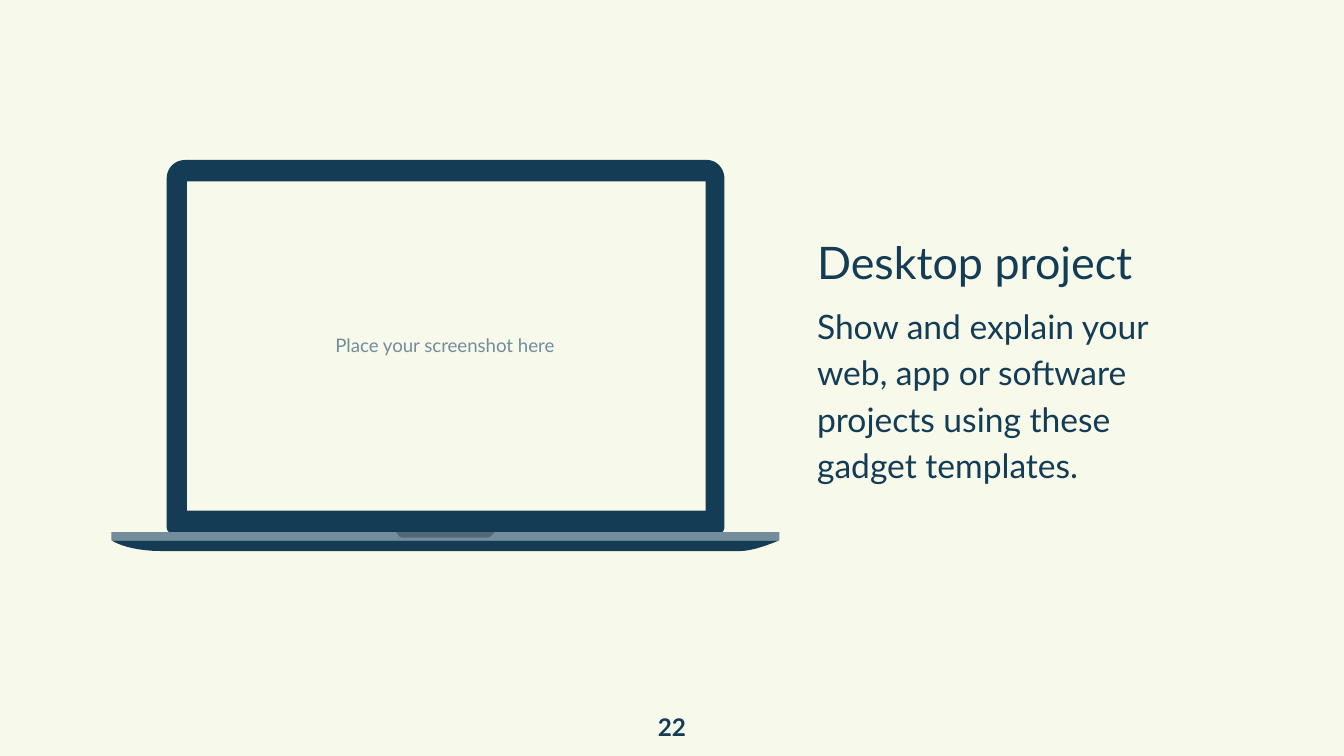
import pptx
import pptx.dml.color
import pptx.enum.text
import pptx.util

Inches = pptx.util.Inches
ALIGN = pptx.enum.text.PP_ALIGN
HUES = {"cream": "F7F9EA", "navy": "143C55", "steel": "748C9C", "slate": "536877"}


def tint(name):
    return pptx.dml.color.RGBColor.from_string(HUES[name])


def write(para, text, size=18, hue="navy", bold=False, align=ALIGN.LEFT, lead=1.0, gap=0):
    para.alignment = align
    para.line_spacing = lead
    para.space_before = pptx.util.Pt(gap)
    run = para.add_run()
    run.text = text
    font = run.font
    font.name, font.size, font.bold = "Lato", pptx.util.Pt(size), bold
    font.color.rgb = tint(hue)


def trace(steps, parts=12):
    spots = []
    for step in steps:
        if len(step) == 2:
            spots.append(step)
            continue
        ctrl = [spots[-1], step[:2], step[2:4], step[4:]]
        for i in range(1, parts + 1):
            t = i / parts
            mix = ((1 - t) ** 3, 3 * t * (1 - t) ** 2, 3 * t * t * (1 - t), t ** 3)
            spots.append(tuple(sum(m * c[k] for m, c in zip(mix, ctrl)) for k in (0, 1)))
    return [(Inches(x), Inches(y)) for x, y in spots]


class Deck:
    """Hold the slide and draw its elements in one style."""

    def __init__(self):
        self.file = pptx.Presentation()
        self.file.slide_width = Inches(10)
        self.file.slide_height = Inches(10 * 9 / 16)
        self.slide = self.file.slides.add_slide(self.file.slide_layouts[6])
        fill = self.slide.background.fill
        fill.solid()
        fill.fore_color.rgb = tint("cream")

    def label(self, area, items, inset=0):
        frame = self.slide.shapes.add_textbox(*map(Inches, area)).text_frame
        frame.word_wrap = True
        frame.vertical_anchor = pptx.enum.text.MSO_ANCHOR.MIDDLE
        frame.margin_left = frame.margin_right = Inches(inset)
        frame.margin_top = frame.margin_bottom = Inches(inset)
        for i, (text, style) in enumerate(items):
            para = frame.add_paragraph() if i else frame.paragraphs[0]
            write(para, text, **style)

    def form(self, hue, *loops):
        first, *rest = map(trace, loops)
        pen = self.slide.shapes.build_freeform(*first[0], scale=1.0)
        pen.add_line_segments(first[1:])
        for spots in rest:
            pen.move_to(*spots[0])
            pen.add_line_segments(spots[1:])
        shape = pen.convert_to_shape()
        shape.shadow.inherit = False
        shape.fill.solid()
        shape.fill.fore_color.rgb = tint(hue)
        shape.line.fill.background()


def main():
    deck = Deck()
    deck.label((1.38, 1.34, 3.86, 2.46), [
        ("Place your screenshot here", dict(size=10, hue="steel", align=ALIGN.CENTER)),
    ], inset=0.1)
    deck.label((4.7, 5.19, 0.6, 0.43), [
        ("22", dict(size=13, bold=True, align=ALIGN.CENTER)),
    ])

    lid = [(5.26, 1.19), (1.38, 1.19), (1.3, 1.19, 1.24, 1.25, 1.24, 1.33),
           (1.24, 3.92), (1.24, 3.95, 1.26, 3.97, 1.29, 3.97),
           (5.35, 3.97), (5.37, 3.97, 5.39, 3.95, 5.39, 3.92),
           (5.39, 1.33), (5.39, 1.25, 5.33, 1.19, 5.26, 1.19)]
    screen = [(5.25, 3.8), (1.39, 3.8), (1.39, 1.35), (5.25, 1.35), (5.25, 3.8)]
    base = [(0.83, 4.02), (0.83, 4.02, 0.94, 4.1, 1.2, 4.1),
            (5.51, 4.1), (5.62, 4.1, 5.8, 4.02, 5.8, 4.02), (0.83, 4.02)]
    edge = [(0.83, 4.02), (5.8, 4.02), (5.8, 3.96), (0.83, 3.96), (0.83, 4.02)]
    notch = [(2.95, 3.96), (2.95, 3.96, 2.97, 4, 2.99, 4),
             (3.63, 4), (3.65, 4, 3.68, 3.96, 3.68, 3.96), (2.95, 3.96)]
    deck.form("navy", lid, screen)
    deck.form("navy", base)
    deck.form("steel", edge)
    deck.form("slate", notch)

    deck.label((6.08, 0.8, 2.5, 3.7), [
        ("Desktop project", dict(size=24, lead=1.15)),
        ("Show and explain your web, app or software projects using these gadget templates.",
         dict(lead=1.15, gap=6)),
    ])
    deck.file.save("out.pptx")


if __name__ == "__main__":
    main()
